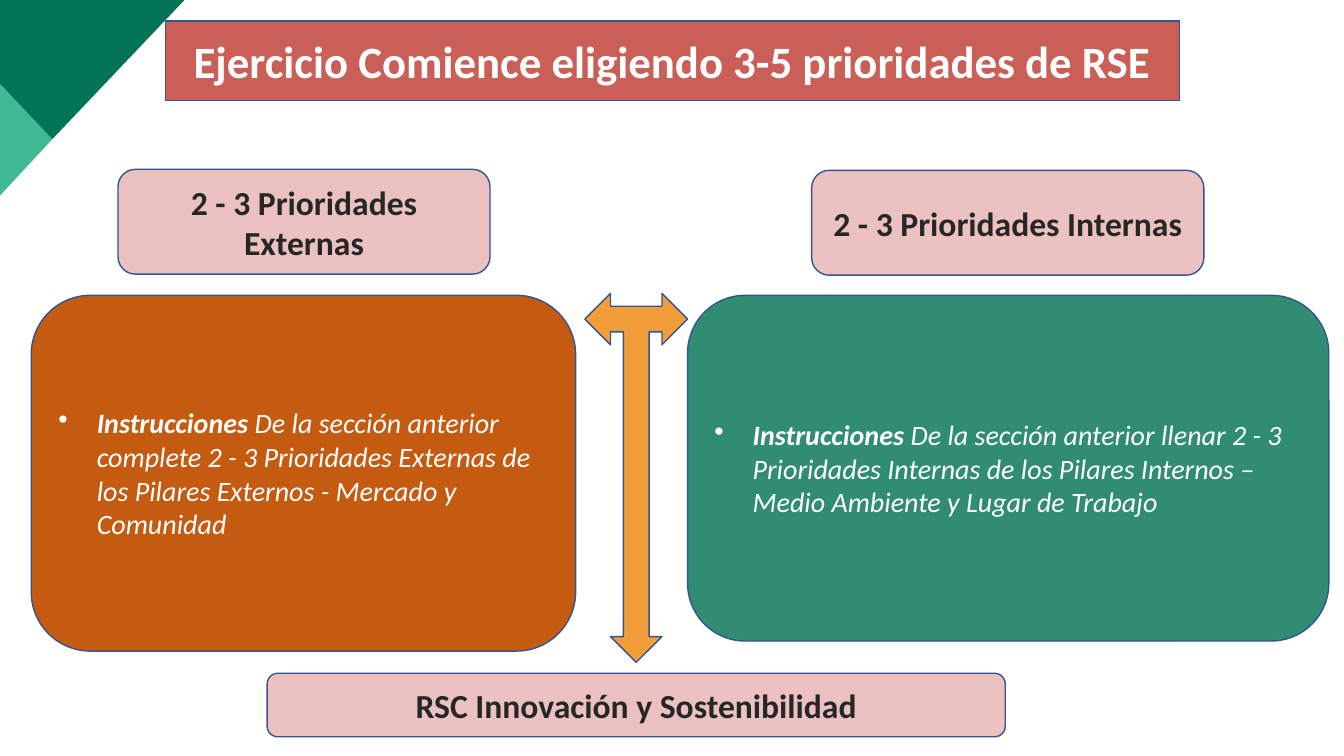
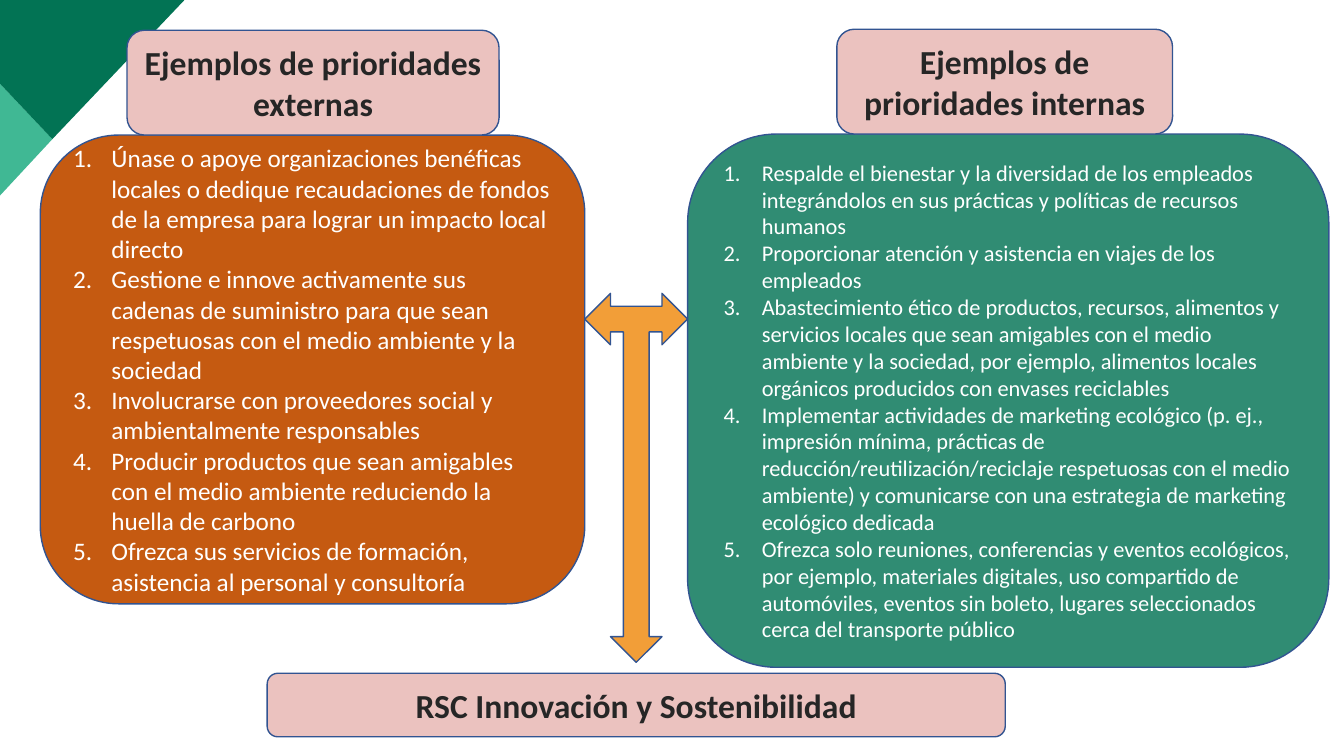
import dataclasses

import pptx
import pptx.dml.color
import pptx.enum.shapes
import pptx.enum.text
import pptx.oxml
import pptx.oxml.ns
import pptx.util

Inches = pptx.util.Inches
Kind = pptx.enum.shapes.MSO_SHAPE
Align = pptx.enum.text.PP_ALIGN
FONT = "Calibri"
WHITE, DARK, EDGE = "FFFFFF", "262626", "325491"
ROSE, PINK, ORANGE, GREEN, GOLD = "C95F57", "EBC2BF", "C55A11", "308C73", "F29E38"
MINT, PINE = "40B894", "027354"
INDENT = 0.38
DOT = '<a:buChar %s char="•"/>'
COUNT = '<a:buAutoNum %s type="arabicPeriod"/>'


@dataclasses.dataclass(frozen=True)
class Label:
    at: tuple[float, float, float, float]
    text: str


@dataclasses.dataclass(frozen=True)
class Panel:
    at: tuple[float, float, float, float]
    fill: str
    lines: tuple[str, ...]
    size: int
    mark: str
    lead: str = ""
    slant: bool = False


@dataclasses.dataclass(frozen=True)
class Wedge:
    fill: str
    points: tuple[tuple[float, float], ...]


CORNER = (
    Wedge(MINT, ((0, 0.83), (0.52, 1.38), (0, 1.94))),
    Wedge(PINE, ((0, 0), (1.83, 0), (0.52, 1.38), (0, 0.83))),
)
FOOT = Label((2.65, 6.68, 7.32, 0.63), "RSC Innovación y Sostenibilidad")
TITLE = Label((1.64, 0.21, 10.06, 0.79), "Ejercicio Comience eligiendo 3-5 prioridades de RSE")

TASK_LABELS = (
    Label((1.17, 1.68, 3.69, 1.04), "2 - 3 Prioridades Externas"),
    Label((8.05, 1.69, 3.89, 1.04), "2 - 3 Prioridades Internas"),
)
TASK_PANELS = (
    Panel((0.31, 2.93, 5.4, 3.53), ORANGE, (
        "De la sección anterior complete 2 - 3 Prioridades Externas de los Pilares Externos - Mercado y Comunidad",
    ), 20, DOT, "Instrucciones ", True),
    Panel((6.82, 2.93, 6.36, 3.43), GREEN, (
        "De la sección anterior llenar 2 - 3 Prioridades Internas de los Pilares Internos – Medio Ambiente y Lugar de Trabajo",
    ), 20, DOT, "Instrucciones ", True),
)
IDEA_LABELS = (
    Label((1.26, 0.3, 3.69, 1.04), "Ejemplos de prioridades externas"),
    Label((8.3, 0.29, 3.33, 1.04), "Ejemplos de prioridades internas"),
)
IDEA_PANELS = (
    Panel((0.4, 1.34, 5.4, 4.65), ORANGE, (
        "Únase o apoye organizaciones benéficas locales o dedique recaudaciones de fondos de la empresa para lograr un impacto local directo",
        "Gestione e innove activamente sus cadenas de suministro para que sean respetuosas con el medio ambiente y la sociedad",
        "Involucrarse con proveedores social y ambientalmente responsables",
        "Producir productos que sean amigables con el medio ambiente reduciendo la huella de carbono",
        "Ofrezca sus servicios de formación, asistencia al personal y consultoría",
    ), 18, COUNT),
    Panel((6.82, 1.33, 6.36, 5.29), GREEN, (
        "Respalde el bienestar y la diversidad de los empleados integrándolos en sus prácticas y políticas de recursos humanos",
        "Proporcionar atención y asistencia en viajes de los empleados",
        "Abastecimiento ético de productos, recursos, alimentos y servicios locales que sean amigables con el medio ambiente y la sociedad, por ejemplo, alimentos locales orgánicos producidos con envases reciclables",
        "Implementar actividades de marketing ecológico (p. ej., impresión mínima, prácticas de reducción/reutilización/reciclaje respetuosas con el medio ambiente) y comunicarse con una estrategia de marketing ecológico dedicada",
        "Ofrezca solo reuniones, conferencias y eventos ecológicos, por ejemplo, materiales digitales, uso compartido de automóviles, eventos sin boleto, lugares seleccionados cerca del transporte público",
    ), 16, COUNT),
)


def tint(hue: str) -> pptx.dml.color.RGBColor:
    return pptx.dml.color.RGBColor.from_string(hue)


def paint(shape, fill: str, edge: str = EDGE) -> None:
    shape.fill.solid()
    shape.fill.fore_color.rgb = tint(fill)
    if edge:
        shape.line.color.rgb = tint(edge)
        shape.line.width = pptx.util.Pt(1)
    else:
        shape.line.fill.background()


def write(shape, *lines: str, size: int, color: str, bold: bool = False,
          slant: bool = False, align=Align.CENTER, mark: str = "", lead: str = "") -> None:
    frame = shape.text_frame
    frame.word_wrap = True
    frame.auto_size = pptx.enum.text.MSO_AUTO_SIZE.NONE
    frame.vertical_anchor = pptx.enum.text.MSO_ANCHOR.MIDDLE
    for spot, line in enumerate(lines):
        para = frame.add_paragraph() if spot else frame.paragraphs[0]
        para.alignment = align
        if mark:
            props = para._p.get_or_add_pPr()
            props.set("marL", str(Inches(INDENT)))
            props.set("indent", str(-Inches(INDENT)))
            space = pptx.oxml.ns.nsdecls("a")
            props.append(pptx.oxml.parse_xml(mark % space))
        for text, heavy in ((lead, True), (line, bold)):
            if text:
                run = para.add_run()
                run.text = text
                run.font.name = FONT
                run.font.size = pptx.util.Pt(size)
                run.font.bold = heavy
                run.font.italic = slant
                run.font.color.rgb = tint(color)


def block(slide, at: tuple[float, float, float, float], fill: str,
          kind=Kind.ROUNDED_RECTANGLE):
    shape = slide.shapes.add_shape(kind, *map(Inches, at))
    shape.shadow.inherit = False
    paint(shape, fill)
    return shape


def corner(slide) -> None:
    for wedge in CORNER:
        first, *rest = [(Inches(x), Inches(y)) for x, y in wedge.points]
        path = slide.shapes.build_freeform(*first)
        path.add_line_segments(rest, close=True)
        shape = path.convert_to_shape()
        shape.shadow.inherit = False
        paint(shape, wedge.fill, edge="")


def head(slide, label: Label) -> None:
    title = slide.shapes.title
    title.left, title.top, title.width, title.height = map(Inches, label.at)
    space = pptx.oxml.ns.nsdecls("a")
    shell = f'<a:prstGeom {space} prst="roundRect"><a:avLst/></a:prstGeom>'
    title.element.spPr.insert(1, pptx.oxml.parse_xml(shell))
    paint(title, ROSE)
    write(title, label.text, size=32, color=WHITE, bold=True)


def build(slide, labels: tuple[Label, ...], panels: tuple[Panel, ...]) -> None:
    corner(slide)
    for panel in panels:
        write(block(slide, panel.at, panel.fill), *panel.lines, size=panel.size,
              color=WHITE, slant=panel.slant, align=Align.LEFT,
              mark=panel.mark, lead=panel.lead)
    arrow = block(slide, (5.8, 2.91, 1.02, 3.66), GOLD, Kind.LEFT_RIGHT_UP_ARROW)
    arrow.rotation = 180
    for label in (*labels, FOOT):
        write(block(slide, label.at, PINK), label.text, size=24, color=DARK, bold=True)


def main() -> None:
    deck = pptx.Presentation()
    deck.slide_width, deck.slide_height = Inches(13.33), Inches(7.5)
    task = deck.slides.add_slide(deck.slide_layouts.get_by_name("Title Only"))
    head(task, TITLE)
    build(task, TASK_LABELS, TASK_PANELS)
    ideas = deck.slides.add_slide(deck.slide_layouts.get_by_name("Blank"))
    build(ideas, IDEA_LABELS, IDEA_PANELS)
    deck.save("out.pptx")


if __name__ == "__main__":
    main()
